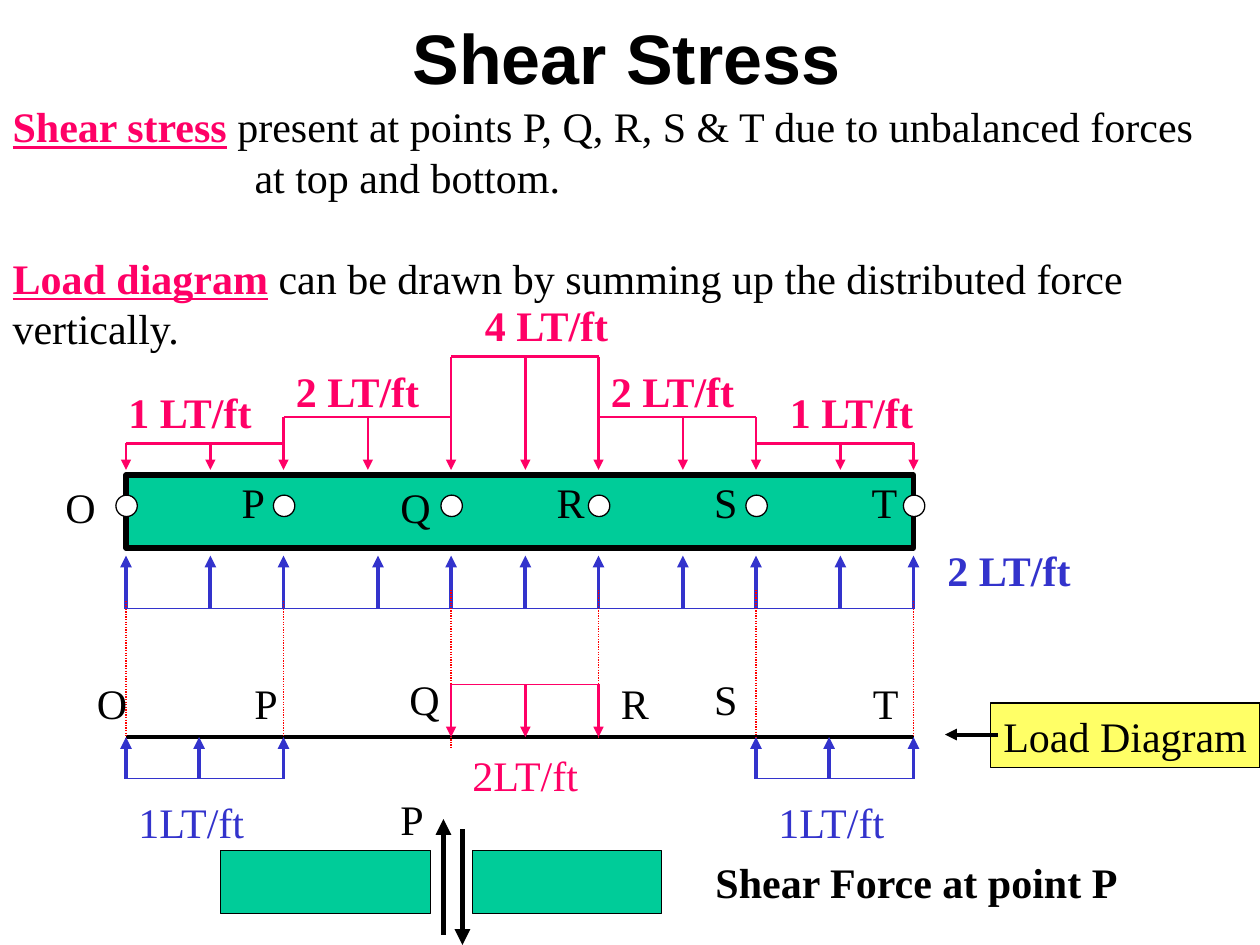
from lxml import etree
from pptx import Presentation
from pptx.dml.color import RGBColor
from pptx.enum.dml import MSO_LINE
from pptx.enum.shapes import MSO_CONNECTOR, MSO_SHAPE
from pptx.enum.text import MSO_ANCHOR, PP_ALIGN
from pptx.oxml.ns import qn
from pptx.util import Inches, Pt

BLACK = RGBColor(0x00, 0x00, 0x00)
WHITE = RGBColor(0xFF, 0xFF, 0xFF)
PINK = RGBColor(0xFF, 0x00, 0x66)
BLUE = RGBColor(0x33, 0x33, 0xCC)
RED = RGBColor(0xFF, 0x00, 0x00)
GREEN = RGBColor(0x00, 0xCC, 0x99)
YELLOW = RGBColor(0xFF, 0xFF, 0x66)
RECTANGLE, OVAL = MSO_SHAPE.RECTANGLE, MSO_SHAPE.OVAL
STRAIGHT = MSO_CONNECTOR.STRAIGHT
DOTTED = MSO_LINE.ROUND_DOT
LEFT, CENTER = PP_ALIGN.LEFT, PP_ALIGN.CENTER
TOP, MIDDLE = MSO_ANCHOR.TOP, MSO_ANCHOR.MIDDLE

presentation = Presentation()
presentation.slide_width = Inches(10)
presentation.slide_height = Inches(7.5)
slide = presentation.slides.add_slide(presentation.slide_layouts[1])


def write_text(paragraph, text, size=24, color=BLACK, bold=False,
               underline=False, font="Times New Roman"):
    run = paragraph.add_run()
    run.text = text
    run.font.name = font
    run.font.size = Pt(size)
    run.font.bold = bold
    run.font.underline = underline
    run.font.color.rgb = color


def draw_line(x1, y1, x2, y2, color, width, arrow=False, dash=None):
    line = slide.shapes.add_connector(
        STRAIGHT, Inches(x1), Inches(y1), Inches(x2), Inches(y2))
    line.line.color.rgb = color
    line.line.width = Pt(width)
    if dash:
        line.line.dash_style = dash
    if arrow:
        tail = etree.SubElement(line.line._get_or_add_ln(), qn("a:tailEnd"))
        tail.set("type", "triangle")
    etree.SubElement(line._element.spPr, qn("a:effectLst"))


# Title
title = slide.shapes.title
title.left, title.top = Inches(3.17), Inches(0.06)
title.width, title.height = Inches(3.6), Inches(0.77)
title.text_frame.word_wrap = False
write_text(title.text_frame.paragraphs[0], "Shear Stress", size=40, bold=True,
           font="Arial")

# Explanation: indent, space before, keyword, remaining text
body = slide.placeholders[1]
body.left, body.top = Inches(0), Inches(0.75)
body.width, body.height = Inches(9.75), Inches(2.1)
body.text_frame.word_wrap = True
explanation = [
    (0, 0, "Shear stress",
     " present at points P, Q, R, S & T due to unbalanced forces"),
    (1.92, 0, "", "at top and bottom."),
    (0, 28.8, "Load diagram",
     " can be drawn by summing up the distributed force vertically."),
]
for index, (indent, space, keyword, rest) in enumerate(explanation):
    frame = body.text_frame
    paragraph = frame.add_paragraph() if index else frame.paragraphs[0]
    paragraph.line_spacing = Pt(28.8)
    paragraph.space_before = Pt(space)
    properties = paragraph._p.get_or_add_pPr()
    properties.set("marL", str(Inches(indent)))
    properties.set("indent", "0")
    etree.SubElement(properties, qn("a:buNone"))
    if keyword:
        write_text(paragraph, keyword, color=PINK, bold=True, underline=True)
    write_text(paragraph, rest)

# Positions along the beam
points = [1, 2.25, 3.58, 4.75, 6, 7.25]  # O, P, Q, R, S, T
middles = [1.67, 2.92, 4.17, 5.42, 6.67]
load_tops = [3.52, 3.31, 2.83, 3.31, 3.52]

# Beam, point markers, caption box and the two cut pieces
blocks = [
    (RECTANGLE, 1, 3.77, 6.25, 0.58, GREEN, 3, ""),
    (RECTANGLE, 7.86, 5.58, 2.14, 0.51, YELLOW, 0.75, "Load Diagram"),
    (RECTANGLE, 1.75, 6.75, 1.67, 0.5, GREEN, 0.75, ""),
    (RECTANGLE, 3.75, 6.75, 1.5, 0.5, GREEN, 0.75, ""),
]
blocks += [(OVAL, x - 0.08, 3.93, 0.17, 0.17, WHITE, 0.75, "") for x in points]
for kind, left, top, width, height, fill, outline, caption in blocks:
    shape = slide.shapes.add_shape(
        kind, Inches(left), Inches(top), Inches(width), Inches(height))
    shape.shadow.inherit = False
    shape.fill.solid()
    shape.fill.fore_color.rgb = fill
    shape.line.color.rgb = BLACK
    shape.line.width = Pt(outline)
    if caption:
        shape.text_frame.word_wrap = False
        shape.text_frame.vertical_anchor = MIDDLE
        shape.text_frame.paragraphs[0].alignment = CENTER
        write_text(shape.text_frame.paragraphs[0], caption)

# Downward loads: each shared point takes the taller neighbour
for start, end, middle, top in zip(points, points[1:], middles, load_tops):
    draw_line(start, top, end, top, PINK, 1.5)
    draw_line(middle, top, middle, 3.73, PINK, 1.5, arrow=True)
for index, x in enumerate(points):
    top = min(load_tops[max(index - 1, 0):index + 1])
    draw_line(x, top, x, 3.73, PINK, 1.5, arrow=True)

# Upward buoyancy
draw_line(1, 4.83, 7.25, 4.83, BLUE, 0.75)
for x in points + [1.67, 3, 4.17, 5.42, 6.67]:
    draw_line(x, 4.83, x, 4.41, BLUE, 2.25, arrow=True)

# Load diagram: base line, projections and net loads
draw_line(1, 5.85, 7.25, 5.85, BLACK, 2.25)
projections = zip(points, [4.77, 4.77, 4.68, 4.68, 4.68, 4.77],
                  [5.93, 6.1, 5.93, 5.85, 5.85, 5.85])
for x, top, bottom in projections:
    draw_line(x, top, x, bottom, RED, 0.75, dash=DOTTED)
net_loads = [
    ((1, 1.58, 2.25), 6.18, BLUE, 2.25),
    ((3.58, 4.17, 4.75), 5.43, PINK, 1.5),
    ((6, 6.58, 7.25), 6.18, BLUE, 2.25),
]
for positions, level, color, width in net_loads:
    draw_line(positions[0], level, positions[-1], level, color, 0.75)
    for x in positions:
        draw_line(x, level, x, 5.85, color, width, arrow=True)

# Caption pointer and shear force pair
draw_line(7.92, 5.83, 7.5, 5.83, BLACK, 2.25, arrow=True)
draw_line(3.52, 7.42, 3.52, 6.5, BLACK, 3, arrow=True)
draw_line(3.67, 6.58, 3.67, 7.5, BLACK, 3, arrow=True)

# Labels: text, left, top, width, colour, bold
labels = [
    ("4 LT/ft", 3.75, 2.33, 1.21, PINK, True),
    ("1 LT/ft", 0.92, 3.02, 1.21, PINK, True),
    ("2 LT/ft", 2.25, 2.85, 1.21, PINK, True),
    ("2 LT/ft", 4.75, 2.85, 1.21, PINK, True),
    ("1 LT/ft", 6.17, 3.02, 1.21, PINK, True),
    ("2 LT/ft", 7.42, 4.27, 1.21, BLUE, True),
    ("1LT/ft", 1, 6.27, 1.07, BLUE, False),
    ("2LT/ft", 3.65, 5.9, 1.07, PINK, False),
    ("1LT/ft", 6.08, 6.27, 1.07, BLUE, False),
    ("P", 3.08, 6.25, 0.39, BLACK, False),
    ("Shear Force at point P", 5.58, 6.75, 3.42, BLACK, True),
]
beam_letters = zip("OPQRST", [0.42, 1.82, 3.08, 4.32, 5.57, 6.82],
                   [3.77, 3.73, 3.77, 3.73, 3.73, 3.73])
diagram_letters = zip("OPQRST", [0.67, 1.92, 3.15, 4.83, 5.57, 6.83],
                      [5.33, 5.33, 5.3, 5.33, 5.3, 5.33])
for letters in (beam_letters, diagram_letters):
    labels += [(letter, left, top, 0.42, BLACK, False)
               for letter, left, top in letters]
for text, left, top, width, color, bold in labels:
    label = slide.shapes.add_textbox(
        Inches(left), Inches(top), Inches(width), Inches(0.5))
    label.text_frame.word_wrap = False
    label.text_frame.vertical_anchor = TOP
    label.text_frame.paragraphs[0].alignment = LEFT
    write_text(label.text_frame.paragraphs[0], text, color=color, bold=bold)

presentation.save("out.pptx")
